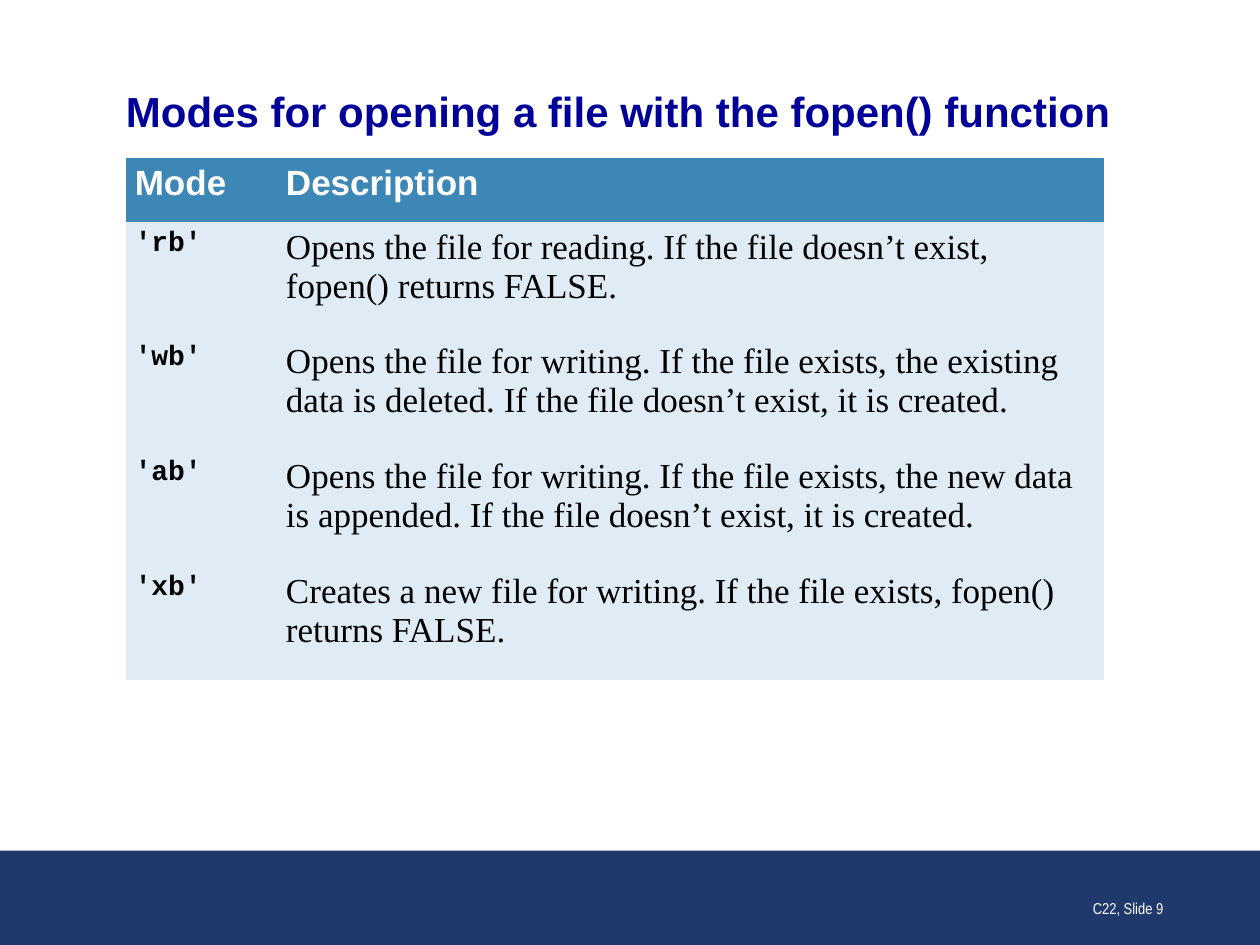
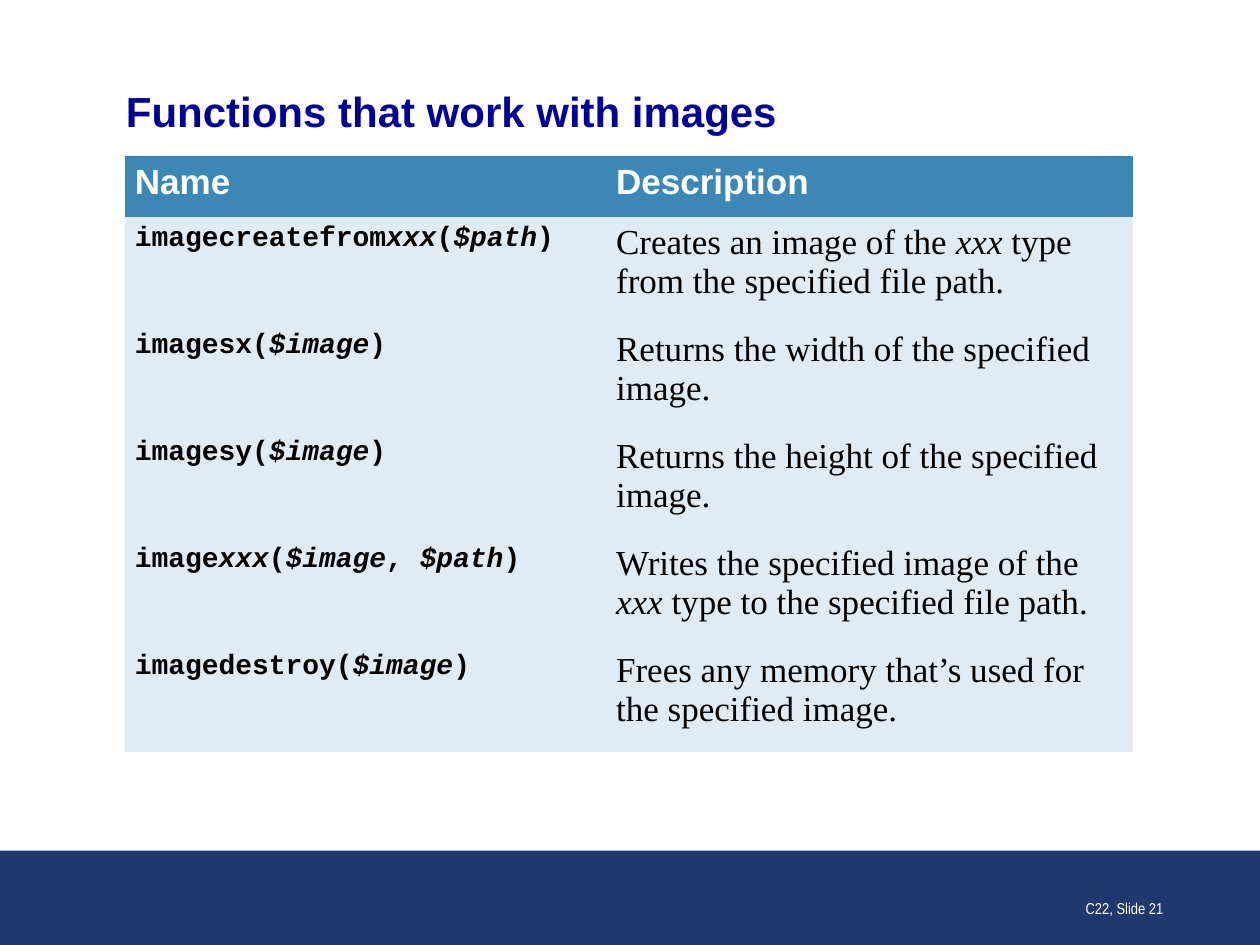
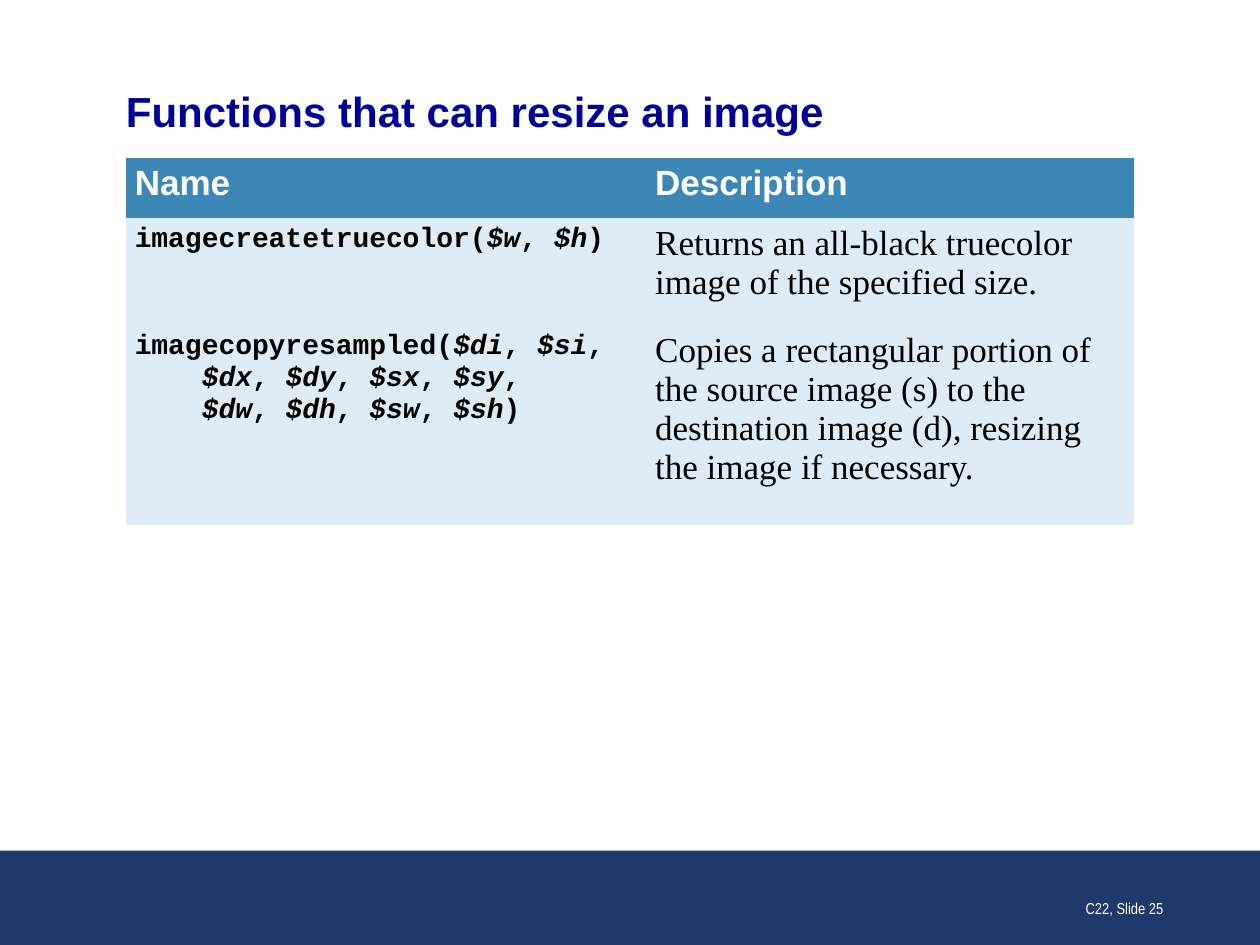
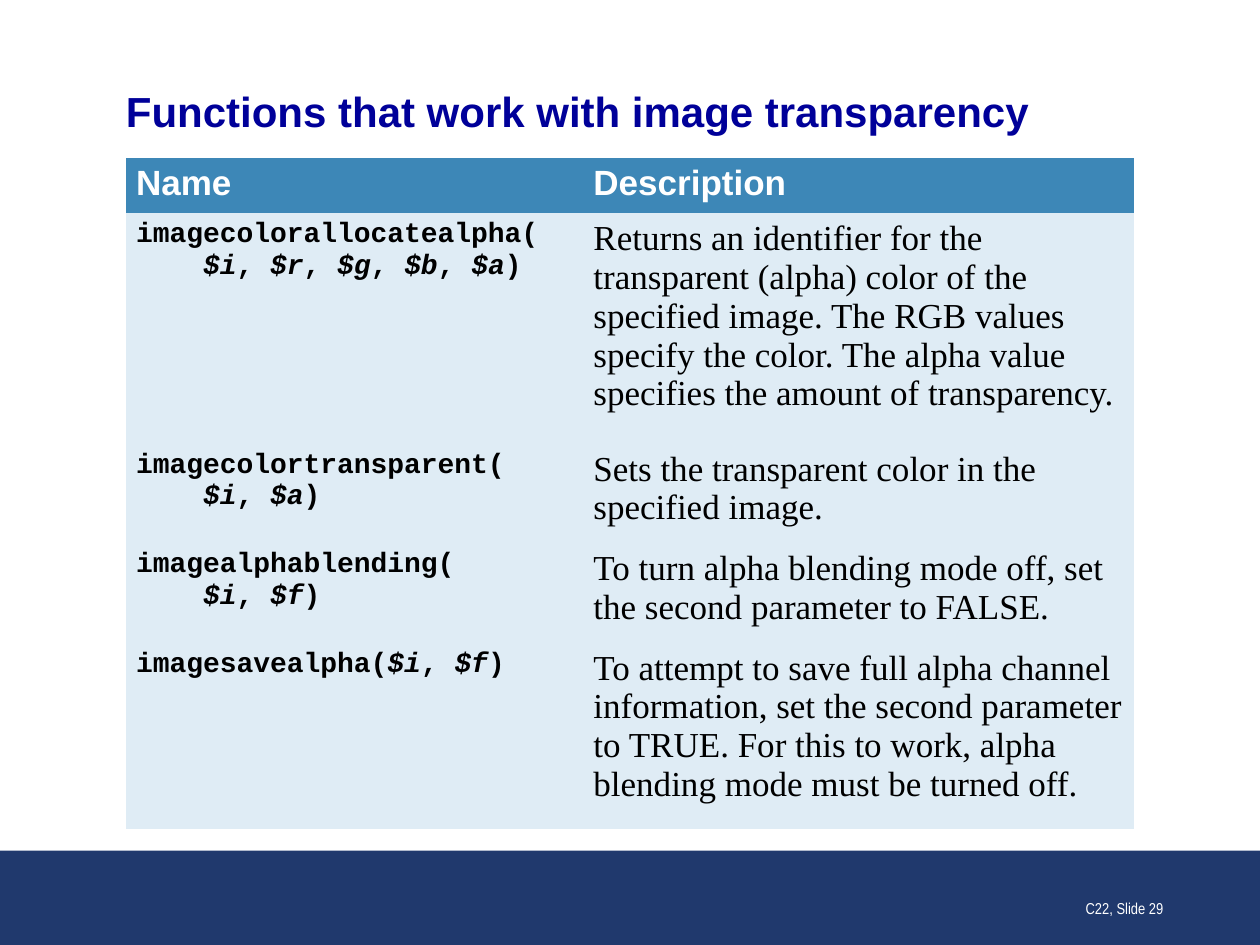
from dataclasses import dataclass

from pptx import Presentation
from pptx.dml.color import RGBColor
from pptx.enum.shapes import MSO_SHAPE
from pptx.enum.text import MSO_ANCHOR, PP_ALIGN
from pptx.oxml.ns import qn
from pptx.util import Inches, Pt


@dataclass(frozen=True)
class TextStyle:
    """Font settings for one role of text."""
    font: str
    size: int
    color: str
    bold: bool = False


@dataclass(frozen=True)
class Theme:
    """Colours and text styles shared by all slides."""
    band: str = "20396D"
    header_fill: str = "3D87B7"
    body_fill: str = "DFECF5"
    title: TextStyle = TextStyle("Arial", 24, "000099", True)
    header: TextStyle = TextStyle("Arial", 20, "FFFFFF", True)
    code: TextStyle = TextStyle("Courier New", 16, "000000", True)
    body: TextStyle = TextStyle("Times New Roman", 20, "000000")
    footer: TextStyle = TextStyle("Arial Narrow", 9, "FFFFFF")
    plain_table: str = "{2D5ABB26-0587-4C30-8999-92F81FD0307C}"


class ReferenceDeck:
    """Builds slides that each show a titled reference table."""

    def __init__(self, theme):
        """Start an empty deck with the given theme."""
        self.theme = theme
        self.deck = Presentation()
        self.deck.slide_width, self.deck.slide_height = Inches(10), Inches(7.5)
        self.page = None

    def add_page(self, title, number):
        """Add a slide with its band, title and footer."""
        self.page = self.deck.slides.add_slide(self.deck.slide_layouts[6])
        self.band()
        self.title(title)
        self.footer(f"C22, Slide {number}")

    def band(self):
        """Draw the dark band along the bottom edge."""
        band = self.page.shapes.add_shape(
            MSO_SHAPE.RECTANGLE, 0, Inches(6.75), Inches(10), Inches(0.75))
        band.shadow.inherit = False
        band.fill.solid()
        band.fill.fore_color.rgb = RGBColor.from_string(self.theme.band)
        band.line.fill.background()

    def text_box(self, left, top, width, height, anchor):
        """Add a wrapping text box and return its frame."""
        box = self.page.shapes.add_textbox(
            Inches(left), Inches(top), Inches(width), Inches(height))
        box.text_frame.word_wrap = True
        box.text_frame.vertical_anchor = anchor
        return box.text_frame

    def title(self, text):
        """Set the slide title."""
        frame = self.text_box(1, 0.68, 8, 0.4, MSO_ANCHOR.MIDDLE)
        frame.margin_left = frame.margin_right = 0
        frame.margin_top = frame.margin_bottom = 0
        para = frame.paragraphs[0]
        para.space_after = Pt(6)
        self.set_text(para, text, self.theme.title)

    def footer(self, text):
        """Set the chapter and slide number at the lower right."""
        frame = self.text_box(7.25, 6.83, 2.08, 0.5, MSO_ANCHOR.BOTTOM)
        para = frame.paragraphs[0]
        para.alignment = PP_ALIGN.RIGHT
        self.set_text(para, text, self.theme.footer)

    def set_text(self, para, text, style):
        """Set text with *italic* marks and line breaks in one style."""
        para.font.name = style.font
        para.font.size = Pt(style.size)
        para.font.bold = style.bold
        para.font.color.rgb = RGBColor.from_string(style.color)
        for index, part in enumerate(text.split("*")):
            for line_index, line in enumerate(part.split("\n")):
                if line_index:
                    para.add_line_break()
                if line:
                    span = para.add_run()
                    span.text = line
                    if index % 2:
                        span.font.italic = True

    def cell(self, cell, text, style, fill, margin, space_after):
        """Fill one table cell."""
        cell.fill.solid()
        cell.fill.fore_color.rgb = RGBColor.from_string(fill)
        cell.margin_left = cell.margin_right = Inches(margin)
        cell.margin_top = cell.margin_bottom = Inches(0.05)
        para = cell.text_frame.paragraphs[0]
        para.space_after = Pt(space_after)
        self.set_text(para, text, style)

    def table(self, rows, widths, heights, left=1, top=1.25, margin=0.07, last_space=6):
        """Add a table with a header row, a code column and a description column."""
        frame = self.page.shapes.add_table(
            len(rows), len(widths), Inches(left), Inches(top),
            Inches(sum(widths)), Inches(sum(heights)))
        table = frame.table
        properties = table._tbl.tblPr
        properties.find(qn("a:tableStyleId")).text = self.theme.plain_table
        table.horz_banding = False
        for column, width in zip(table.columns, widths):
            column.width = Inches(width)
        for index, (texts, height) in enumerate(zip(rows, heights)):
            table.rows[index].height = Inches(height)
            if index == 0:
                styles, fill = (self.theme.header, self.theme.header), self.theme.header_fill
            else:
                styles, fill = (self.theme.code, self.theme.body), self.theme.body_fill
            space_after = last_space if index == len(rows) - 1 else 6
            for column, (text, style) in enumerate(zip(texts, styles)):
                self.cell(table.cell(index, column), text, style, fill, margin, space_after)


MODES = [
    ("Mode", "Description"),
    ("'rb'", "Opens the file for reading. If the file doesn’t exist, fopen() returns FALSE."),
    ("'wb'", "Opens the file for writing. If the file exists, the existing data is deleted. "
             "If the file doesn’t exist, it is created."),
    ("'ab'", "Opens the file for writing. If the file exists, the new data is appended. "
             "If the file doesn’t exist, it is created."),
    ("'xb'", "Creates a new file for writing. If the file exists, fopen() returns FALSE."),
]

IMAGE_FUNCTIONS = [
    ("Name", "Description"),
    ("imagecreatefrom*xxx*(*$path*)",
     "Creates an image of the *xxx* type from the specified file path."),
    ("imagesx(*$image*)", "Returns the width of the specified image."),
    ("imagesy(*$image*)", "Returns the height of the specified image."),
    ("image*xxx*(*$image*, *$path*)",
     "Writes the specified image of the *xxx* type to the specified file path."),
    ("imagedestroy(*$image*)", "Frees any memory that’s used for the specified image."),
]

RESIZE_FUNCTIONS = [
    ("Name", "Description"),
    ("imagecreatetruecolor(*$w*, *$h*)",
     "Returns an all-black truecolor image of the specified size."),
    ("imagecopyresampled(*$di*, *$si*,\n    *$dx*, *$dy*, *$sx*, *$sy*,\n"
     "    *$dw*, *$dh*, *$sw*, *$sh*)",
     "Copies a rectangular portion of the source image (s) to the destination image (d), "
     "resizing the image if necessary."),
]

TRANSPARENCY_FUNCTIONS = [
    ("Name", "Description"),
    ("imagecolorallocatealpha(\n    *$i*, *$r*, *$g*, *$b*, *$a*)",
     "Returns an identifier for the transparent (alpha) color of the specified image. "
     "The RGB values specify the color. The alpha value specifies the amount of transparency."),
    ("imagecolortransparent(\n    *$i*, *$a*)",
     "Sets the transparent color in the specified image."),
    ("imagealphablending(\n    *$i*, *$f*)",
     "To turn alpha blending mode off, set the second parameter to FALSE."),
    ("imagesavealpha(*$i*, *$f*)",
     "To attempt to save full alpha channel information, set the second parameter to TRUE. "
     "For this to work, alpha blending mode must be turned off."),
]


def main():
    """Build the four reference slides and save them."""
    slides = ReferenceDeck(Theme())

    slides.add_page("Modes for opening a file with the fopen() function", 9)
    slides.table(MODES, [1.2, 6.56], [0.51] + [0.91] * 4)

    slides.add_page("Functions that work with images", 21)
    slides.table(IMAGE_FUNCTIONS, [3.82, 4.18], [0.48] + [0.85] * 5,
                 left=0.99, top=1.24, margin=0.08, last_space=9)

    slides.add_page("Functions that can resize an image", 25)
    slides.table(RESIZE_FUNCTIONS, [4.13, 3.87], [0.48, 0.85, 1.59])

    slides.add_page("Functions that work with image transparency", 29)
    slides.table(TRANSPARENCY_FUNCTIONS, [3.63, 4.37], [0.44, 1.83, 0.79, 0.79, 1.48],
                 margin=0.08, last_space=9)

    slides.deck.save("out.pptx")


if __name__ == "__main__":
    main()
